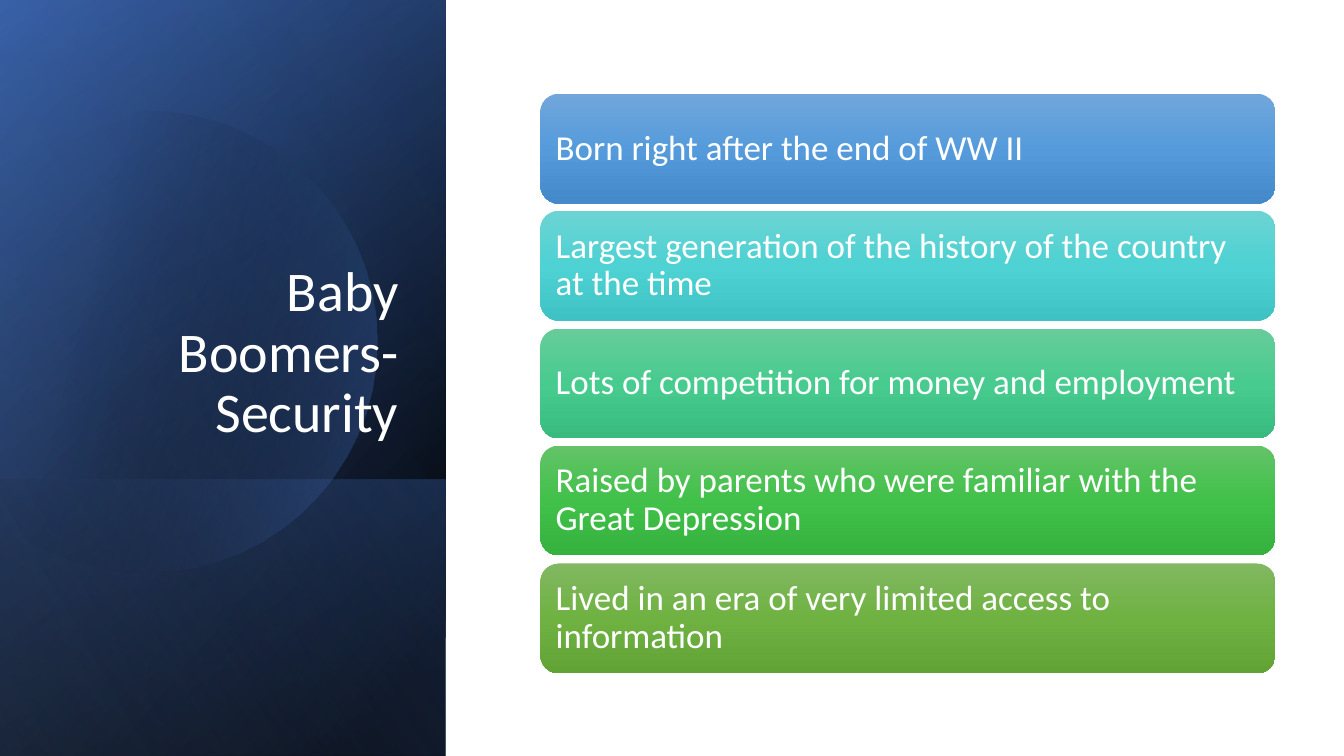
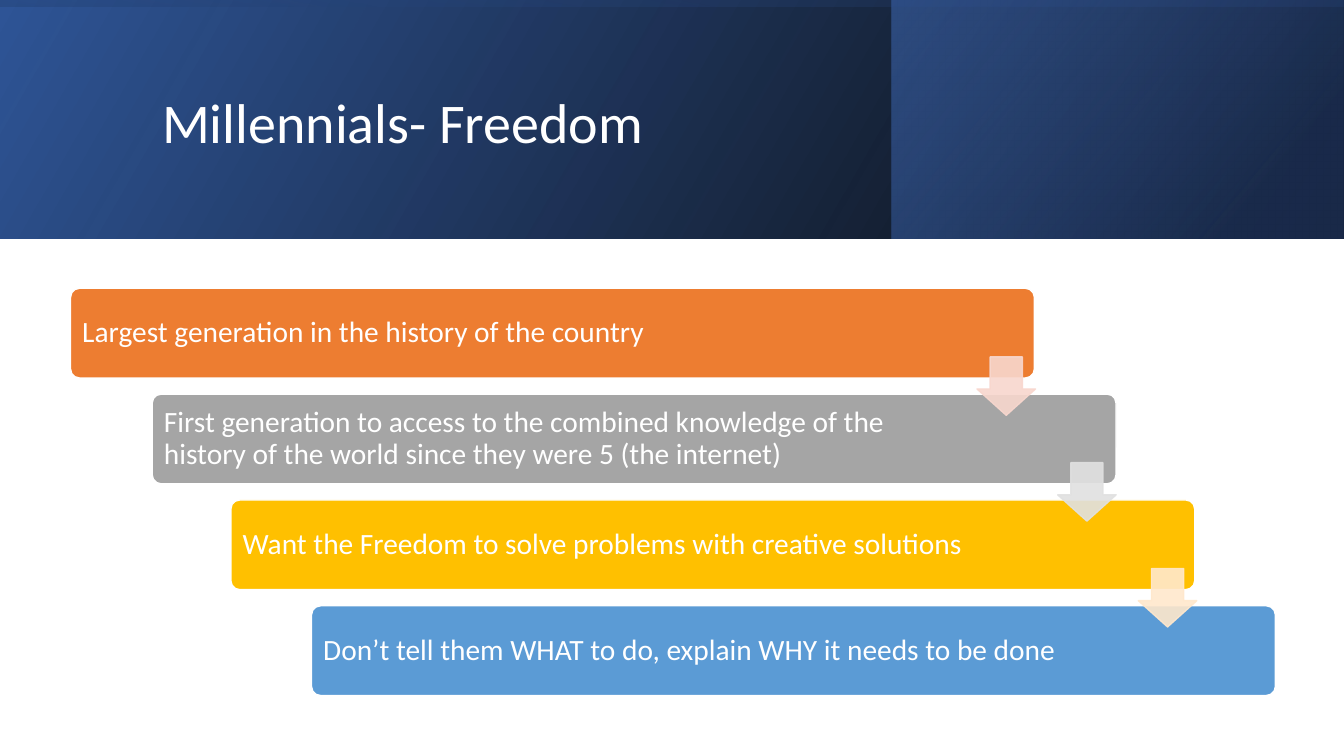
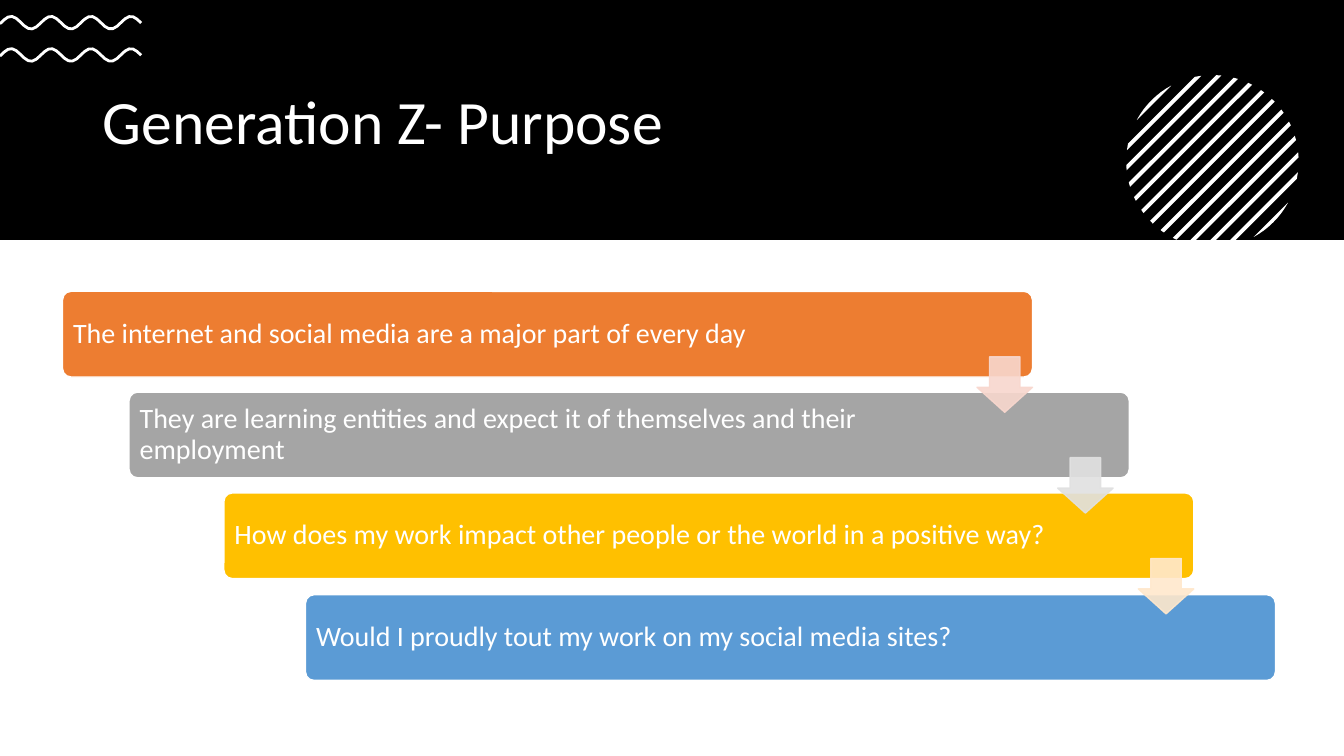
from dataclasses import dataclass
from math import acos, cos, pi, radians, sin, sqrt
from typing import NamedTuple

from lxml.etree import SubElement
from pptx import Presentation
from pptx.dml.color import RGBColor
from pptx.enum.shapes import MSO_SHAPE as Preset
from pptx.enum.text import MSO_ANCHOR as Anchor, PP_ALIGN as Align
from pptx.oxml.ns import qn
from pptx.shapes.autoshape import Shape
from pptx.slide import Slide
from pptx.text.text import TextFrame
from pptx.util import Emu, Pt

# Scale: 100 px to the inch
EMU_PER_PX = 9144
SLIDE_W, SLIDE_H = 1333, 750

FONT = "Calibri"
WHITE = RGBColor(0xFF, 0xFF, 0xFF)
BLACK = RGBColor(0x00, 0x00, 0x00)
BLUE = RGBColor(0x44, 0x72, 0xC4)
DEEP_BLUE = RGBColor(0x2F, 0x55, 0x97)
NAVY = RGBColor(0x20, 0x38, 0x64)
PALE_BLUE = RGBColor(0x8F, 0xAA, 0xDC)
STEP_COLORS = (
    RGBColor(0xED, 0x7D, 0x31),
    RGBColor(0xA5, 0xA5, 0xA5),
    RGBColor(0xFF, 0xC0, 0x00),
    RGBColor(0x5B, 0x9B, 0xD5),
)
ARROW_COLORS = (
    RGBColor(0xF8, 0xD7, 0xCE),
    RGBColor(0xE1, 0xE1, 0xE1),
    RGBColor(0xFF, 0xE8, 0xCC),
)

Point = tuple[float, float]


class Box(NamedTuple):
    left: int
    top: int
    width: int
    height: int


class Stop(NamedTuple):
    position: int
    color: RGBColor
    opacity: int = 100


@dataclass(frozen=True)
class Panel:
    box: Box
    stops: tuple[Stop, ...]
    angle: int
    rotation: int = 0


@dataclass(frozen=True)
class Card:
    text: str
    colors: tuple[RGBColor, ...]


@dataclass(frozen=True)
class Step:
    text: str
    left: int
    width: int


@dataclass(frozen=True)
class Staircase:
    steps: tuple[Step, ...]
    top: int
    span: int  # from the first step's top to the last one's
    height: int
    arrow_size: int
    text_size: int
    inset: int
    right_inset: int


def px(length: float) -> Emu:
    return Emu(round(length * EMU_PER_PX))


# Shared drawing
def add_preset(slide: Slide, preset: Preset, box: Box) -> Shape:
    shape = slide.shapes.add_shape(preset, *(px(n) for n in box))
    shape.shadow.inherit = False
    shape.line.fill.background()
    return shape


def fill_solid(shape: Shape, color: RGBColor) -> None:
    shape.fill.solid()
    shape.fill.fore_color.rgb = color


def set_line(shape: Shape, color: RGBColor, width: int) -> None:
    shape.line.color.rgb = color
    shape.line.width = Pt(width)


def set_opacity(color_element, percent: int) -> None:
    SubElement(color_element, qn("a:alpha")).set("val", str(percent * 1000))


def fill_gradient(shape: Shape, stops: tuple[Stop, ...], angle: int) -> None:
    shape.fill.gradient()
    gradient = shape._element.spPr.find(qn("a:gradFill"))
    stop_list = gradient.find(qn("a:gsLst"))
    stop_list.clear()
    for stop in stops:
        entry = SubElement(stop_list, qn("a:gs"))
        entry.set("pos", str(stop.position * 1000))
        color = SubElement(entry, qn("a:srgbClr"))
        color.set("val", str(stop.color))
        if stop.opacity < 100:
            set_opacity(color, stop.opacity)
    gradient.find(qn("a:lin")).set("ang", str(angle * 60000))


def add_outline(slide: Slide, points: list[Point], close: bool = True) -> Shape:
    corners = [(px(x), px(y)) for x, y in points]
    builder = slide.shapes.build_freeform(*corners[0])
    builder.add_line_segments(corners[1:], close=close)
    outline = builder.convert_to_shape()
    outline.shadow.inherit = False
    outline.line.fill.background()
    return outline


def add_panel(slide: Slide, panel: Panel) -> None:
    shape = add_preset(slide, Preset.RECTANGLE, panel.box)
    shape.rotation = panel.rotation
    shape._element.spPr.find(qn("a:xfrm")).set("flipH", "1")
    fill_gradient(shape, panel.stops, panel.angle)


def write(frame: TextFrame, text: str, size: int, align: Align = Align.LEFT,
          anchor: Anchor = Anchor.MIDDLE) -> None:
    frame.word_wrap = True
    frame.vertical_anchor = anchor
    paragraph = frame.paragraphs[0]
    paragraph.alignment = align
    paragraph.line_spacing = 0.9
    run = paragraph.add_run()
    run.text = text
    run.font.name = FONT
    run.font.size = Pt(size)
    run.font.color.rgb = WHITE


def add_title(slide: Slide, box: Box, text: str, size: int = 40,
              align: Align = Align.LEFT, anchor: Anchor = Anchor.MIDDLE) -> None:
    title = slide.shapes.add_textbox(*(px(n) for n in box))
    write(title.text_frame, text, size, align, anchor)


def set_insets(frame: TextFrame, inset: int, right: int) -> None:
    frame.margin_left = frame.margin_top = frame.margin_bottom = px(inset)
    frame.margin_right = px(right)


def add_staircase(slide: Slide, stairs: Staircase) -> None:
    gaps = len(stairs.steps) - 1
    tops = [stairs.top + i * stairs.span // gaps for i in range(gaps + 1)]
    for step, top, color in zip(stairs.steps, tops, STEP_COLORS):
        bar = add_preset(slide, Preset.ROUNDED_RECTANGLE,
                         Box(step.left, top, step.width, stairs.height))
        bar.adjustments[0] = 0.1
        fill_solid(bar, color)
        set_line(bar, WHITE, 1)
        set_insets(bar.text_frame, stairs.inset, stairs.right_inset)
        write(bar.text_frame, step.text, stairs.text_size)

    # Arrows from each step to the next
    first_left, pitch, first_top = 969, 80, 354
    for i, color in enumerate(ARROW_COLORS):
        arrow = add_preset(slide, Preset.DOWN_ARROW,
                           Box(first_left + i * pitch, first_top + tops[i] - tops[0],
                               stairs.arrow_size, stairs.arrow_size))
        arrow.adjustments[0], arrow.adjustments[1] = 0.55, 0.45
        fill_solid(arrow, color)
        set_line(arrow, color, 1)
        for color_element in arrow._element.spPr.iter(qn("a:srgbClr")):
            set_opacity(color_element, 90)


# Slide 1: Baby Boomers
SIDE = Box(-154, 154, 750, 442)
SIDE_BACK = (
    Panel(SIDE, (Stop(8, BLACK), Stop(100, DEEP_BLUE)), 50, 90),
    Panel(SIDE, (Stop(0, BLACK, 0), Stop(99, BLUE, 46)), 30, 90),
    Panel(Box(84, 392, 274, 442), (Stop(2, BLUE, 29), Stop(100, BLACK, 30)), 130, 90),
)
SIDE_SHEEN = Panel(SIDE, (Stop(0, BLACK, 0), Stop(99, PALE_BLUE, 11)), 120, 90)


def tones(*codes: str) -> tuple[RGBColor, ...]:
    return tuple(RGBColor.from_string(code) for code in codes)


BOOMER_CARDS = (
    Card("Born right after the end of WW II", tones("71A6DB", "559BDB", "448ACA")),
    Card("Largest generation of the history of the country at the time",
         tones("6CD3D3", "4ED2D3", "3EC2C3")),
    Card("Lots of competition for money and employment",
         tones("67CC9A", "47CB8E", "39BB7F")),
    Card("Raised by parents who were familiar with the Great Depression",
         tones("63C368", "42C14A", "34B23D")),
    Card("Lived in an era of very limited access to information",
         tones("81B861", "6FB242", "62A336")),
)


def add_side_disc(slide: Slide) -> None:
    center_x, center_y, radius, left_edge = 145, 339, 229, -15
    rim = [(max(left_edge, center_x + radius * cos(radians(a))),
            center_y + radius * sin(radians(a))) for a in range(0, 360, 6)]
    disc = add_outline(slide, rim)
    fill_gradient(disc, (Stop(29, BLACK, 0), Stop(100, BLUE, 43)), 14)


def draw_boomers(slide: Slide) -> None:
    for panel in SIDE_BACK:
        add_panel(slide, panel)
    add_side_disc(slide)
    add_panel(slide, SIDE_SHEEN)
    add_title(slide, Box(64, 184, 341, 262), "Baby Boomers- Security",
              align=Align.RIGHT, anchor=Anchor.BOTTOM)

    first_top, span = 93, 466
    for i, card in enumerate(BOOMER_CARDS):
        top = first_top + i * span // (len(BOOMER_CARDS) - 1)
        shape = add_preset(slide, Preset.ROUNDED_RECTANGLE, Box(536, top, 729, 109))
        stops = tuple(Stop(at, color) for at, color in zip((0, 50, 100), card.colors))
        fill_gradient(shape, stops, 90)
        set_insets(shape.text_frame, 10, 10)
        write(shape.text_frame, card.text, 25)


# Slide 2: Millennials
BANNER = (
    Panel(Box(0, 0, SLIDE_W, 237), (Stop(0, BLACK, 96), Stop(100, DEEP_BLUE)), 330),
    Panel(Box(884, 0, 448, 237), (Stop(19, NAVY, 68), Stop(100, BLUE, 48)), 320),
    Panel(Box(548, -548, 237, SLIDE_W),
          (Stop(23, DEEP_BLUE, 16), Stop(99, BLACK, 45)), 350, 270),
)
MILLENNIAL_STAIRS = Staircase(
    (
        Step("Largest generation in the history of the country", 70, 956),
        Step("First generation to access to the combined knowledge of the history "
             "of the world since they were 5 (the internet)", 151, 956),
        Step("Want the Freedom to solve problems with creative solutions", 229, 956),
        Step("Don’t tell them WHAT to do, explain WHY it needs to be done", 309, 956),
    ),
    top=286, span=315, height=89, arrow_size=58, text_size=21, inset=9, right_inset=150,
)


def draw_millennials(slide: Slide) -> None:
    for panel in BANNER:
        add_panel(slide, panel)
    add_title(slide, Box(151, 38, 1063, 172), "Millennials- Freedom")
    add_staircase(slide, MILLENNIAL_STAIRS)


# Slide 3: Generation Z
BAND_H = 238
GEN_Z_STAIRS = Staircase(
    (
        Step("The internet and social media are a major part of every day", 62, 962),
        Step("They are learning entities and expect it of themselves and their "
             "employment", 128, 992),
        Step("How does my work impact other people or the world in a positive way?",
             222, 962),
        Step("Would I proudly tout my work on my social media sites?", 303, 962),
    ),
    top=289, span=301, height=85, arrow_size=55, text_size=20, inset=8, right_inset=142,
)


def add_wave(slide: Slide, middle: float) -> None:
    length, period, crest, amplitude = 140, 39.6, 11, 6.25
    points = [(x, middle - amplitude * cos(2 * pi * (x - crest) / period))
              for x in range(0, length + 1, 4)]
    wave = add_outline(slide, points, close=False)
    wave.fill.background()
    set_line(wave, WHITE, 2)


def add_striped_disc(slide: Slide) -> None:
    center_x, center_y, radius = 1202.5, 160, 85.5
    pitch, thickness, cap_start = 19.7, 5.5, 116
    reach = radius * sqrt(2)

    def rim_point(angle: float) -> Point:
        x = center_x + radius * cos(angle)
        y = center_y + radius * sin(angle)
        overshoot = max(0, y - BAND_H)  # slide back along the stripe to the band's edge
        return x + overshoot, y - overshoot

    def add_stripe(start: float, end: float, pieces: int) -> None:
        first, last = acos(start / reach), acos(end / reach)
        turns = [first + (last - first) * i / pieces for i in range(pieces + 1)]
        right = [rim_point(pi / 4 - turn) for turn in turns]
        left = [rim_point(pi / 4 + turn) for turn in reversed(turns)]
        fill_solid(add_outline(slide, right + left), WHITE)

    # Each stripe runs between two diagonals, given as offsets of x + y
    add_stripe(-reach, -cap_start, 4)
    for i in range(-5, 6):
        add_stripe(i * pitch - thickness / 2, i * pitch + thickness / 2, 1)
    add_stripe(cap_start, reach, 4)


def draw_gen_z(slide: Slide) -> None:
    band = add_preset(slide, Preset.RECTANGLE, Box(0, 0, SLIDE_W, BAND_H))
    fill_solid(band, BLACK)
    add_title(slide, Box(92, 62, 1150, 123), "Generation Z- Purpose", size=44)
    for middle in (54.5, 22.5):
        add_wave(slide, middle)
    add_striped_disc(slide)
    add_staircase(slide, GEN_Z_STAIRS)


def main() -> None:
    deck = Presentation()
    deck.slide_width, deck.slide_height = px(SLIDE_W), px(SLIDE_H)
    blank = deck.slide_layouts[6]
    for draw in (draw_boomers, draw_millennials, draw_gen_z):
        draw(deck.slides.add_slide(blank))
    deck.save("out.pptx")


if __name__ == "__main__":
    main()
